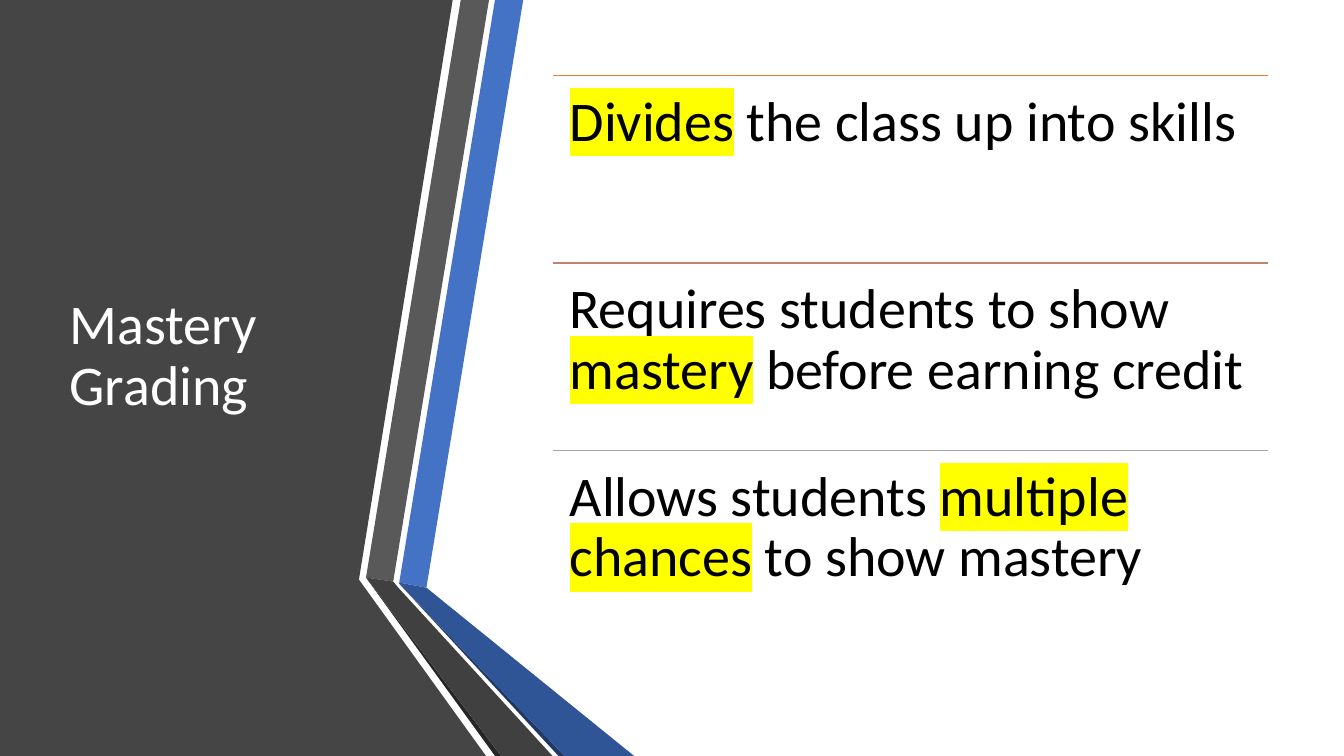
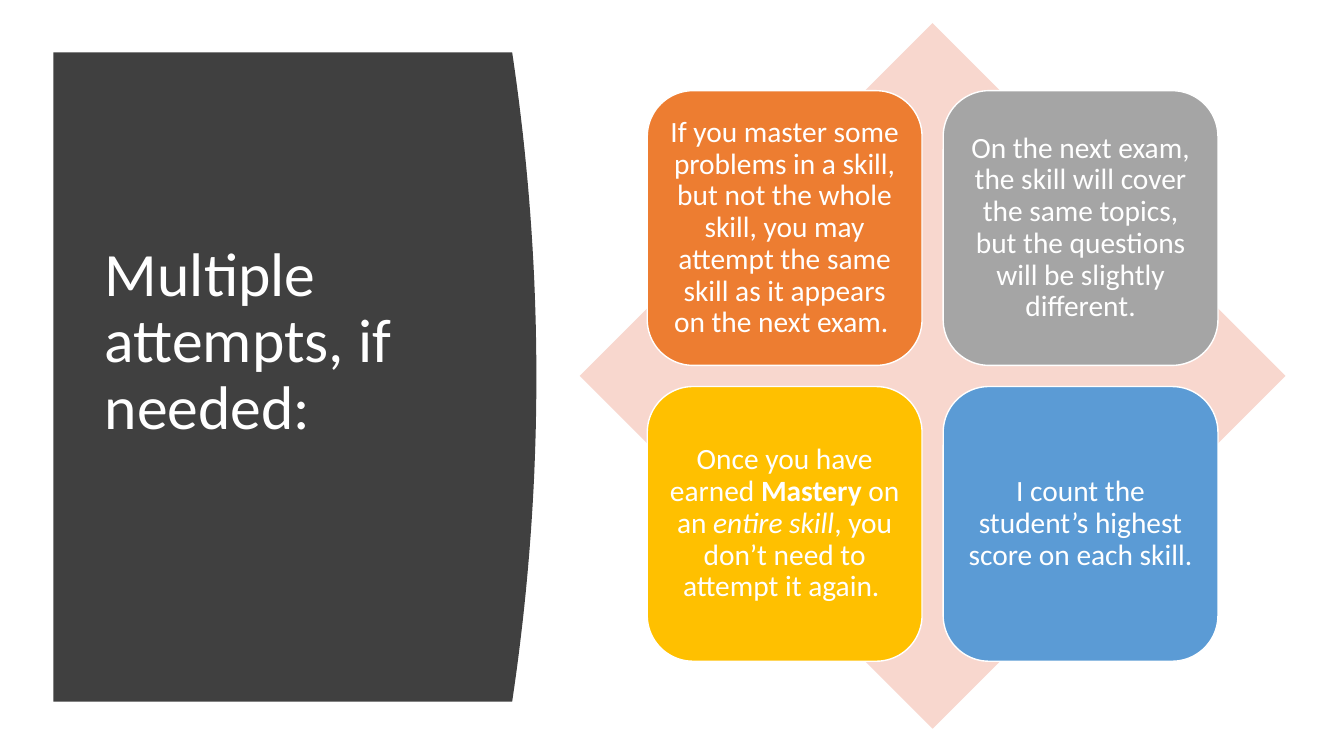
from collections import namedtuple

from lxml import etree
from pptx import Presentation
from pptx.dml.color import RGBColor
from pptx.enum import shapes, text
from pptx.oxml import ns
from pptx.util import Inches, Pt

Box = namedtuple("Box", "left top width height")

FONT = "Calibri"
COLORS = {
    "white": "FFFFFF", "black": "000000", "highlight": "FFFF00",
    "side": "454545", "panel": "404040",
    "blue": "4472C4", "blue_fold": "2F5597", "blue_edge": "203864",
    "gray": "595959", "gray_fold": "404040", "gray_edge": "262626",
    "orange": "ED7D31", "rose": "C48170", "silver": "A5A5A5",
    "gold": "FFC000", "sky": "5B9BD5", "diamond": "F8D7CE",
}

SIDE_OUTLINE = [(0, 0), (4.49, 0), (3.56, 5.75), (4.82, 7.5), (0, 7.5)]
RIBBONS = [
    ("blue", [(3.96, 5.78), (4.23, 5.83), (5.19, 0), (4.91, 0)]),
    ("gray", [(4.85, 0), (4.57, 0), (3.63, 5.73), (3.9, 5.77)]),
    ("gray_edge", [(3.63, 5.73), (4.91, 7.5), (4.97, 7.5)]),
    ("blue_edge", [(3.96, 5.79), (5.54, 7.5), (5.6, 7.5)]),
    ("blue_fold", [(3.96, 5.79), (5.6, 7.5), (6.29, 7.5), (4.23, 5.83), (3.96, 5.78)]),
    ("gray_fold", [(5.48, 7.5), (3.95, 5.83), (3.9, 5.77), (3.63, 5.73), (4.97, 7.5)]),
]

# Each text is a list of runs: (words, style)
POINTS = [
    ("orange", [("Divides", "mark"), (" the class up into skills", "")]),
    ("rose", [("Requires students to show ", ""), ("mastery", "mark"),
              (" before earning credit", "")]),
    ("silver", [("Allows students ", ""), ("multiple", "mark"), (" ", ""),
                ("chances", "mark"), (" to show mastery", "")]),
]
CARDS = [
    ("orange", [("If you master some problems in a skill, but not the whole skill, "
                 "you may attempt the same skill as it appears on the next exam. ", "")]),
    ("silver", [("On the next exam, the skill will cover the same topics, "
                 "but the questions will be slightly different.", "")]),
    ("gold", [("Once you have earned ", ""), ("Mastery ", "bold"), ("on an ", ""),
              ("entire skill", "italic"),
              (", you don’t need to attempt it again. ", "")]),
    ("sky", [("I count the student’s highest score on each skill.", "")]),
]


def rgb(name):
    return RGBColor.from_string(COLORS[name])


def inches(values):
    return [Inches(value) for value in values]


def fill_shape(shape, color, line=None):
    shape.shadow.inherit = False
    shape.fill.solid()
    shape.fill.fore_color.rgb = rgb(color)
    if line:
        shape.line.color.rgb = rgb(line)
        shape.line.width = Pt(1)
    else:
        shape.line.fill.background()


def add_outline(slide, box, points, color):
    """Fill a polygon whose points are measured from the box's top left corner."""
    corners = [inches((box.left + x, box.top + y)) for x, y in points]
    builder = slide.shapes.build_freeform(*corners[0], scale=1.0)
    builder.add_line_segments(corners[1:], close=True)
    shape = builder.convert_to_shape()
    fill_shape(shape, color)
    return shape


def highlight(run):
    mark = etree.Element(ns.qn("a:highlight"))
    etree.SubElement(mark, ns.qn("a:srgbClr"), val=COLORS["highlight"])
    run.font.fill.solid()
    run.font.color.rgb = rgb("black")
    run.font.element.find(ns.qn("a:latin")).addprevious(mark) if hasattr(
        run.font, "element") else run._r.rPr.find(ns.qn("a:latin")).addprevious(mark)


def write_text(shape, runs, size, color, align, anchor, margins):
    frame = shape.text_frame
    formats = {"word_wrap": True, "auto_size": text.MSO_AUTO_SIZE.NONE,
               "vertical_anchor": anchor}
    sides = ("margin_left", "margin_top", "margin_right", "margin_bottom")
    formats.update(zip(sides, inches(margins)))
    for name, value in formats.items():
        setattr(frame, name, value)
    paragraph = frame.paragraphs[0]
    paragraph.alignment = align
    paragraph.line_spacing = 0.9
    for words, style in runs:
        run = paragraph.add_run()
        run.text = words
        font_formats = {"name": FONT, "size": Pt(size),
                        "bold": style == "bold", "italic": style == "italic"}
        for name, value in font_formats.items():
            setattr(run.font, name, value)
        run.font.color.rgb = rgb(color)
        if style == "mark":
            highlight(run)


def place_title(slide, box, words, size, bottom_margin=0.05):
    """Fill the title placeholder and bring it in front of the dark panel."""
    title = slide.shapes.title
    title.left, title.top, title.width, title.height = inches(box)
    write_text(title, [(words, "")], size, "white", text.PP_ALIGN.LEFT,
               text.MSO_ANCHOR.MIDDLE, (0.1, 0.05, 0.1, bottom_margin))
    slide.shapes.element.append(title.element)


def add_rule(slide, box, color):
    """Draw a line along the top of the box."""
    ends = inches((box.left, box.top, box.left + box.width, box.top))
    rule = slide.shapes.add_connector(shapes.MSO_CONNECTOR.STRAIGHT, *ends)
    rule.line.color.rgb = rgb(color)
    rule.line.width = Pt(1)
    etree.SubElement(rule.element.spPr, ns.qn("a:effectLst"))


def add_side_panel(slide, box):
    add_outline(slide, box, SIDE_OUTLINE, "side")
    for color, points in RIBBONS:
        add_outline(slide, box, points, color)


def add_ruled_list(slide, box, points):
    row_height = box.height / len(points)
    for index, (color, runs) in enumerate(points):
        row = Box(box.left, box.top + index * row_height, box.width, row_height)
        add_rule(slide, row, color)
        item = slide.shapes.add_textbox(*inches(row))
        write_text(item, runs, 40, "black", text.PP_ALIGN.LEFT,
                   text.MSO_ANCHOR.TOP, [0.17] * 4)


def add_curved_panel(slide, box, bulge=0.24, steps=40):
    """Draw a panel whose right edge bows outward as a parabola."""
    points = [(0, 0)]
    for step in range(steps + 1):
        offset = 2 * step / steps - 1
        points.append((box.width - bulge * offset ** 2, box.height * step / steps))
    points.append((0, box.height))
    add_outline(slide, box, points, "panel")


def add_card_matrix(slide, box, cards, inset=0.67, gap=0.21):
    """Set cards two by two over a diamond that fills the box."""
    diamond = slide.shapes.add_shape(shapes.MSO_SHAPE.DIAMOND, *inches(box))
    fill_shape(diamond, "diamond")
    side = (box.width - 2 * inset - gap) / 2
    for index, (color, runs) in enumerate(cards):
        row, column = divmod(index, 2)
        place = Box(box.left + inset + column * (side + gap),
                    box.top + inset + row * (side + gap), side, side)
        card = slide.shapes.add_shape(shapes.MSO_SHAPE.ROUNDED_RECTANGLE, *inches(place))
        fill_shape(card, color, "white")
        write_text(card, runs, 21, "white", text.PP_ALIGN.CENTER,
                   text.MSO_ANCHOR.MIDDLE, [0.09] * 4)


def build_mastery_slide(slide):
    add_side_panel(slide, Box(0, 0, 6.29, 7.5))
    place_title(slide, Box(0.59, 0.75, 3.04, 5.58), "Mastery Grading", 40)
    add_ruled_list(slide, Box(5.48, 0.75, 7.1, 5.58), POINTS)


def build_attempts_slide(slide):
    add_curved_panel(slide, Box(0.53, 0.52, 4.79, 6.44))
    place_title(slide, Box(0.94, 1.11, 3.74, 5.24), "Multiple attempts, if needed:",
                44, bottom_margin=0.71)
    add_card_matrix(slide, Box(5.75, 0.23, 7, 7), CARDS)


def main():
    presentation = Presentation()
    presentation.slide_width, presentation.slide_height = inches((13.33, 7.5))
    title_only = presentation.slide_layouts[5]
    for build in (build_mastery_slide, build_attempts_slide):
        build(presentation.slides.add_slide(title_only))
    presentation.save("out.pptx")


if __name__ == "__main__":
    main()
